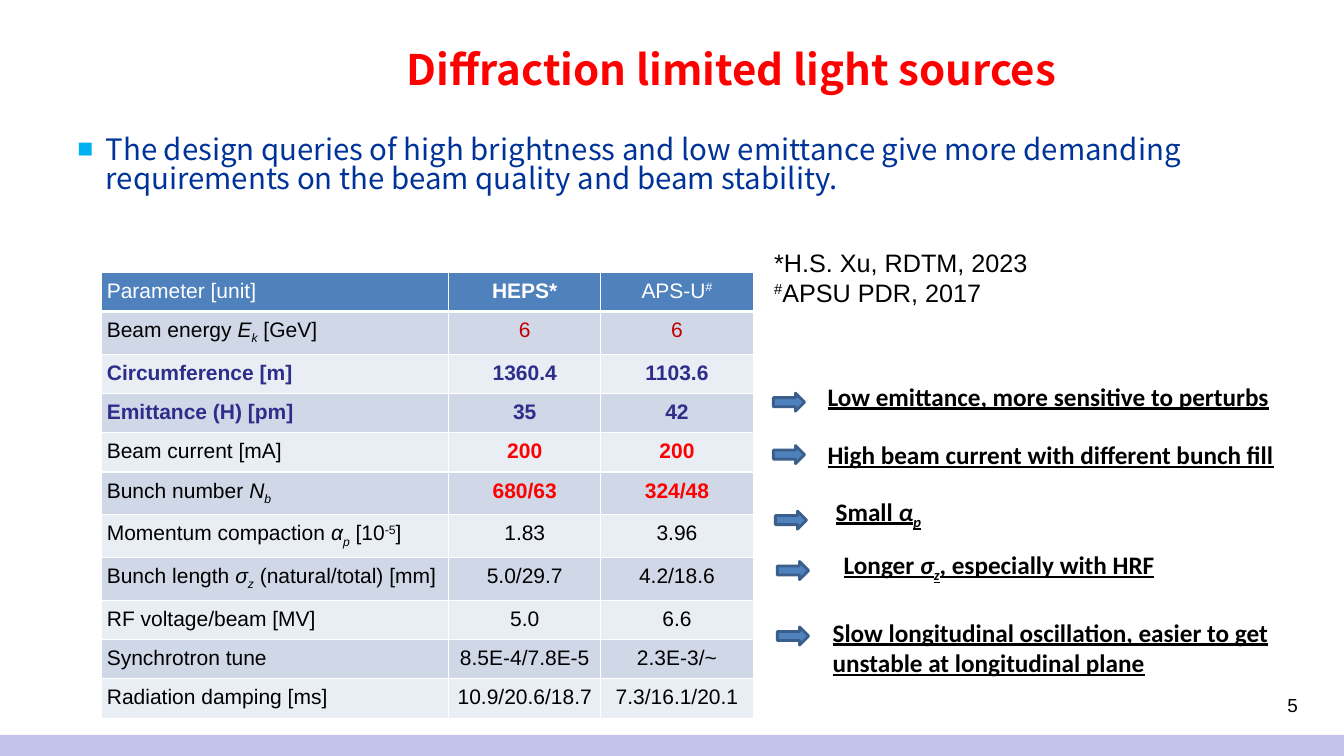
from lxml import etree
from pptx import Presentation
from pptx.dml.color import RGBColor
from pptx.enum.shapes import MSO_SHAPE
from pptx.enum.text import MSO_ANCHOR, PP_ALIGN
from pptx.oxml.ns import qn
from pptx.util import Inches, Pt

LEFT, CENTER, RIGHT = PP_ALIGN.LEFT, PP_ALIGN.CENTER, PP_ALIGN.RIGHT
TOP, MIDDLE = MSO_ANCHOR.TOP, MSO_ANCHOR.MIDDLE
RECTANGLE, RIGHT_ARROW = MSO_SHAPE.RECTANGLE, MSO_SHAPE.RIGHT_ARROW

COLORS = {
    "black": "000000", "white": "FFFFFF", "red": "FF0000", "dark red": "C00000",
    "navy": "003399", "indigo": "2D2D8A", "cyan": "00B0F0", "lavender": "C3C3EB",
    "blue": "4F81BD", "blue edge": "3A5F8C", "band dark": "D0D8E8", "band light": "E9EDF4",
}
HEADING_FONT, BODY_FONT, NOTE_FONT = "Noto Sans CJK SC", "Arial", "Calibri"
BASELINES = {"sub": -25000, "super": 30000}

# A text is a string or a list of runs: plain strings or (string, *styles).
HEADER = ["Parameter [unit]", "HEPS*", ["APS-U", ("#", "super")]]
# label, value for HEPS, value for APS-U, label colour, value colour
PARAMETERS = [
    (["Beam energy ", ("E", "italic"), ("k", "italic", "sub"), " [GeV]"], "6", "6", "black", "dark red"),
    ("Circumference [m]", "1360.4", "1103.6", "indigo", "indigo"),
    ("Emittance (H) [pm]", "35", "42", "indigo", "indigo"),
    ("Beam current [mA]", "200", "200", "black", "red"),
    (["Bunch number ", ("N", "italic"), ("b", "italic", "sub")], "680/63", "324/48", "black", "red"),
    (["Momentum compaction ", ("α", "italic"), ("p", "italic", "sub"), " [10", ("-5", "super"), "]"],
     "1.83", "3.96", "black", "black"),
    (["Bunch length ", ("σ", "italic"), ("z", "italic", "sub"), " (natural/total) [mm]"],
     "5.0/29.7", "4.2/18.6", "black", "black"),
    ("RF voltage/beam [MV]", "5.0", "6.6", "black", "black"),
    ("Synchrotron tune", "8.5E-4/7.8E-5", "2.3E-3/~", "black", "black"),
    ("Radiation damping [ms]", "10.9/20.6/18.7", "7.3/16.1/20.1", "black", "black"),
]
BOLD_COLORS = ("indigo", "red")
# arrow left, arrow top, text box, text
CONSEQUENCES = [
    (7.67, 3.9, (8.11, 3.73, 5.06, 0.4), "Low emittance, more sensitive to perturbs"),
    (7.67, 4.42, (8.11, 4.31, 4.86, 0.4), "High beam current with different bunch fill"),
    (7.69, 5.07, (8.19, 4.87, 1.84, 0.4), ["Small ", ("α", "italic"), ("p", "italic", "sub")]),
    (7.71, 5.57, (8.27, 5.4, 3.86, 0.4),
     ["Longer ", ("σ", "italic"), ("z", "italic", "sub"), ", especially with HRF"]),
    (7.71, 6.22, (8.16, 6.07, 4.76, 0.71),
     "Slow longitudinal oscillation, easier to get unstable at longitudinal plane"),
]


def color(name):
    return RGBColor.from_string(COLORS[name])


class SlideBuilder:
    def __init__(self, slide):
        self.slide = slide

    def add_runs(self, paragraph, text, size, font=BODY_FONT, ink="black", align=LEFT,
                 bold=False, underline=False):
        paragraph.alignment = align
        for part in [text] if isinstance(text, str) else text:
            content, *styles = (part,) if isinstance(part, str) else part
            run = paragraph.add_run()
            run.text = content
            run.font.name, run.font.size = font, Pt(size)
            run.font.bold, run.font.underline = bold, underline
            run.font.italic = "italic" in styles
            run.font.color.rgb = color(ink)
            for style in styles:
                if style in BASELINES:
                    run.font._element.set("baseline", str(BASELINES[style]))

    def text(self, box, lines, size, anchor=TOP, **style):
        """Add a text box with one paragraph per line and return its paragraphs."""
        frame = self.slide.shapes.add_textbox(*map(Inches, box)).text_frame
        frame.word_wrap = True
        frame.vertical_anchor = anchor
        for number, line in enumerate(lines):
            paragraph = frame.add_paragraph() if number else frame.paragraphs[0]
            self.add_runs(paragraph, line, size, **style)
        return frame.paragraphs

    def bullet(self, box, line, size, **style):
        paragraph = self.text(box, [line], size, **style)[0]
        paragraph.line_spacing = 0.82
        properties = paragraph._p.get_or_add_pPr()
        properties.set("marL", str(Inches(0.28)))
        properties.set("indent", str(Inches(-0.28)))
        bullet_color = etree.SubElement(properties, qn("a:buClr"))
        etree.SubElement(bullet_color, qn("a:srgbClr"), val=COLORS["cyan"])
        etree.SubElement(properties, qn("a:buSzPct"), val="90000")
        etree.SubElement(properties, qn("a:buFont"), typeface=BODY_FONT)
        etree.SubElement(properties, qn("a:buChar"), char="■")

    def shape(self, kind, box, fill, edge=None):
        shape = self.slide.shapes.add_shape(kind, *map(Inches, box))
        shape.shadow.inherit = False
        shape.fill.solid()
        shape.fill.fore_color.rgb = color(fill)
        if edge:
            shape.line.color.rgb = color(edge)
            shape.line.width = Pt(2)
        else:
            shape.line.fill.background()

    def cell(self, cell, text, fill, borders, **style):
        cell.margin_left = cell.margin_right = Inches(0.05)
        cell.margin_top = cell.margin_bottom = Inches(0.07)
        self.add_runs(cell.text_frame.paragraphs[0], text, 15, **style)
        properties = cell._tc.get_or_add_tcPr()
        for side, width in zip("LRTB", borders):
            line = etree.SubElement(properties, qn(f"a:ln{side}"), w=str(Pt(width)))
            line_fill = etree.SubElement(line, qn("a:solidFill"))
            etree.SubElement(line_fill, qn("a:srgbClr"), val=COLORS["white"])
        cell.fill.solid()
        cell.fill.fore_color.rgb = color(fill)

    def parameter_table(self, box, widths):
        table = self.slide.shapes.add_table(
            len(PARAMETERS) + 1, len(widths), *map(Inches, box)).table
        for column, width in zip(table.columns, widths):
            column.width = Inches(width)
        for row in table.rows:
            row.height = Inches(0.33)
        for column, text in enumerate(HEADER):
            self.cell(table.cell(0, column), text, "blue", (1, 1, 1, 3), ink="white",
                      align=CENTER if column else LEFT, bold=column == 1)
        for row, (*texts, label_ink, value_ink) in enumerate(PARAMETERS, 1):
            for column, text in enumerate(texts):
                ink = value_ink if column else label_ink
                self.cell(table.cell(row, column), text,
                          "band dark" if row % 2 else "band light",
                          (1, 1, 3 if row == 1 else 1, 1), ink=ink,
                          align=CENTER if column else LEFT, bold=ink in BOLD_COLORS)


def main():
    presentation = Presentation()
    presentation.slide_width, presentation.slide_height = Inches(13.33), Inches(7.5)
    builder = SlideBuilder(presentation.slides.add_slide(presentation.slide_layouts[6]))

    builder.shape(RECTANGLE, (0, 7.29, 13.33, 0.21), "lavender")
    builder.text((9.27, 6.83, 3.7, 0.33), ["5"], 13.5, align=RIGHT)
    builder.text((2.05, 0.06, 10.41, 1.25), ["Diffraction limited light sources"], 30,
                 anchor=MIDDLE, font=HEADING_FONT, ink="red", align=CENTER, bold=True)
    builder.bullet((0.67, 1.31, 12, 0.9),
                   "The design queries of high brightness and low emittance give more demanding "
                   "requirements on the beam quality and beam stability.",
                   21, font=HEADING_FONT, ink="navy")
    builder.parameter_table((1.01, 2.7, 6.46, 3.63), (3.44, 1.51, 1.51))
    for left, top, box, text in CONSEQUENCES:
        builder.text(box, [text], 18, font=NOTE_FONT, bold=True, underline=True)
        builder.shape(RIGHT_ARROW, (left, top, 0.31, 0.18), "blue", "blue edge")
    builder.text((7.58, 2.4, 3.06, 0.71),
                 ["*H.S. Xu, RDTM, 2023", [("#", "super"), "APSU PDR, 2017"]], 18)
    presentation.save("out.pptx")


if __name__ == "__main__":
    main()
